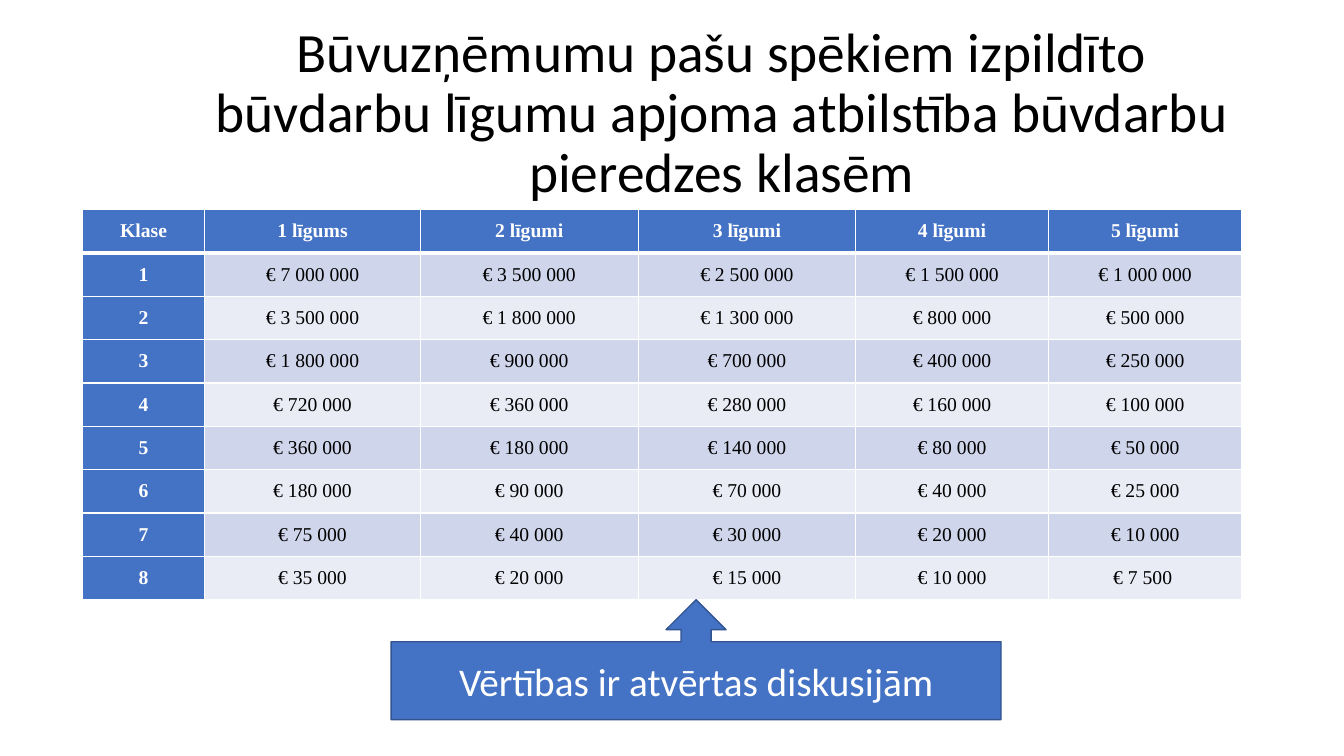
import lxml.etree
import pptx
import pptx.dml.color
import pptx.enum.shapes
import pptx.enum.text
import pptx.oxml.ns
import pptx.util

RGBColor = pptx.dml.color.RGBColor
BLUE = RGBColor(0x44, 0x72, 0xC4)
OUTLINE = RGBColor(0x32, 0x54, 0x91)
BANDS = RGBColor(0xE9, 0xEB, 0xF5), RGBColor(0xCF, 0xD5, 0xEA)
WHITE = RGBColor(0xFF, 0xFF, 0xFF)
BLACK = RGBColor(0, 0, 0)

COLUMN_WIDTHS = 9.08, 16.05, 16.2, 16.2, 14.33, 14.4
HEADINGS = "Klase", "1 līgums", "2 līgumi", "3 līgumi", "4 līgumi", "5 līgumi"
AMOUNTS = [
    ("€ 7 000 000", "€ 3 500 000", "€ 2 500 000", "€ 1 500 000", "€ 1 000 000"),
    ("€ 3 500 000", "€ 1 800 000", "€ 1 300 000", "€ 800 000", "€ 500 000"),
    ("€ 1 800 000", "€ 900 000", "€ 700 000", "€ 400 000", "€ 250 000"),
    ("€ 720 000", "€ 360 000", "€ 280 000", "€ 160 000", "€ 100 000"),
    ("€ 360 000", "€ 180 000", "€ 140 000", "€ 80 000", "€ 50 000"),
    ("€ 180 000", "€ 90 000", "€ 70 000", "€ 40 000", "€ 25 000"),
    ("€ 75 000", "€ 40 000", "€ 30 000", "€ 20 000", "€ 10 000"),
    ("€ 35 000", "€ 20 000", "€ 15 000", "€ 10 000", "€ 7 500 "),
]


class ClassSlide:
    """Styled slide whose lengths are percentages of its width and height."""

    def __init__(self, deck):
        self.deck = deck
        self.slide = deck.slides.add_slide(deck.slide_layouts[5])
        self.font = "Calibri"
        self.table_font = "Times New Roman"

    def across(self, share):
        return round(self.deck.slide_width * share / 100)

    def down(self, share):
        return round(self.deck.slide_height * share / 100)

    def area(self, left, top, width, height):
        return self.across(left), self.down(top), self.across(width), self.down(height)

    def set_text(self, frame, text, font, size, color, bold=False):
        frame.text = text
        paragraph = frame.paragraphs[0]
        paragraph.alignment = pptx.enum.text.PP_ALIGN.CENTER
        paragraph.font.name = font
        paragraph.font.size = pptx.util.Pt(size)
        paragraph.font.color.rgb = color
        paragraph.font.bold = bold
        return paragraph

    def title(self, text, area):
        heading = self.slide.shapes.title
        heading.left, heading.top, heading.width, heading.height = self.area(*area)
        frame = heading.text_frame
        frame.word_wrap = True
        frame.auto_size = pptx.enum.text.MSO_AUTO_SIZE.NONE
        frame.vertical_anchor = pptx.enum.text.MSO_ANCHOR.MIDDLE
        self.set_text(frame, text, self.font, 39.6, BLACK).line_spacing = 0.9

    def borders(self, cell, row):
        properties = cell._tc.get_or_add_tcPr()
        thick_side = {0: "B", 1: "T"}.get(row)
        for side in "LRTB":
            width = pptx.util.Pt(3 if side == thick_side else 1)
            line = lxml.etree.SubElement(
                properties, pptx.oxml.ns.qn(f"a:ln{side}"), w=str(int(width)))
            fill = lxml.etree.SubElement(line, pptx.oxml.ns.qn("a:solidFill"))
            lxml.etree.SubElement(fill, pptx.oxml.ns.qn("a:srgbClr"), val=str(WHITE))

    def table(self, rows, widths, left, top, height):
        area = self.area(left, top, sum(widths), height)
        grid = self.slide.shapes.add_table(len(rows), len(widths), *area).table
        grid.first_col = True
        for column, width in zip(grid.columns, widths):
            column.width = self.across(width)
        for r, texts in enumerate(rows):
            for c, text in enumerate(texts):
                cell = grid.cell(r, c)
                heading = r == 0 or c == 0
                cell.margin_left = cell.margin_right = pptx.util.Inches(0.07)
                cell.margin_top = cell.margin_bottom = 0
                cell.vertical_anchor = pptx.enum.text.MSO_ANCHOR.MIDDLE
                self.borders(cell, r)
                cell.fill.solid()
                cell.fill.fore_color.rgb = BLUE if heading else BANDS[r % 2]
                self.set_text(cell.text_frame, text, self.table_font, 14,
                              WHITE if heading else BLACK, heading)

    def callout(self, text, area):
        note = self.slide.shapes.add_shape(
            pptx.enum.shapes.MSO_SHAPE.UP_ARROW_CALLOUT, *self.area(*area))
        note.shadow.inherit = False
        note.fill.solid()
        note.fill.fore_color.rgb = BLUE
        note.line.color.rgb = OUTLINE
        note.line.width = pptx.util.Pt(1)
        note.text_frame.word_wrap = True
        note.text_frame.vertical_anchor = pptx.enum.text.MSO_ANCHOR.MIDDLE
        self.set_text(note.text_frame, text, self.font, 28, WHITE)


def main():
    deck = pptx.Presentation()
    deck.slide_width = pptx.util.Inches(13.33)
    deck.slide_height = pptx.util.Inches(7.5)
    page = ClassSlide(deck)
    page.title("Būvuzņēmumu pašu spēkiem izpildīto būvdarbu līgumu apjoma "
               "atbilstība būvdarbu pieredzes klasēm", (15, 5.47, 77.4, 19.33))
    rows = [HEADINGS] + [(str(n), *row) for n, row in enumerate(AMOUNTS, 1)]
    page.table(rows, COLUMN_WIDTHS, 6.15, 27.73, 51.6)
    page.callout("Vērtības ir atvērtas diskusijām", (29.1, 79.33, 45.38, 15.87))
    deck.save("out.pptx")


if __name__ == "__main__":
    main()
